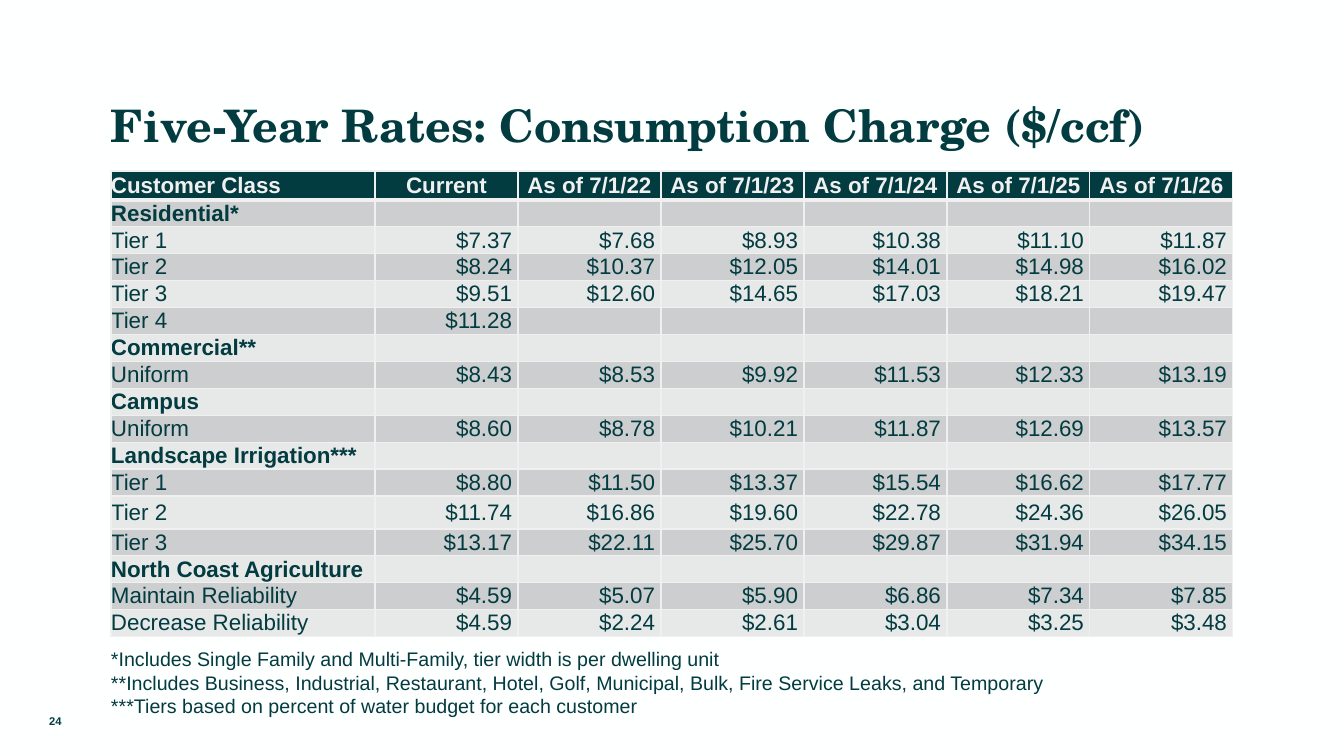
from dataclasses import dataclass

from lxml import etree
from pptx import Presentation
from pptx import util as u
from pptx.dml import color
from pptx.enum import text
from pptx.oxml import ns

PX = 914400 / 100.8


@dataclass(frozen=True)
class Theme:
    background: str = "FEFFFF"
    ink: str = "023B40"
    pale: str = "F0F0F0"
    bands: tuple = ("E7E8E8", "CCCECF")
    heading_font: str = "TeX Gyre Schola"
    body_font: str = "Arial"
    title_size: int = 32
    table_size: int = 16
    footnote_size: int = 14
    number_size: int = 8


THEME = Theme()
ALIGN = text.PP_ALIGN
ANCHOR = text.MSO_ANCHOR

TITLE = "Five-Year Rates: Consumption Charge ($/ccf)"
HEADER = ["Customer Class", "Current"] + [f"As of 7/1/{year}" for year in range(22, 27)]
RATES = [
    ("Residential*",),
    ("Tier 1", 7.37, 7.68, 8.93, 10.38, 11.10, 11.87),
    ("Tier 2", 8.24, 10.37, 12.05, 14.01, 14.98, 16.02),
    ("Tier 3", 9.51, 12.60, 14.65, 17.03, 18.21, 19.47),
    ("Tier 4", 11.28),
    ("Commercial**",),
    ("Uniform", 8.43, 8.53, 9.92, 11.53, 12.33, 13.19),
    ("Campus",),
    ("Uniform", 8.60, 8.78, 10.21, 11.87, 12.69, 13.57),
    ("Landscape Irrigation***",),
    ("Tier 1", 8.80, 11.50, 13.37, 15.54, 16.62, 17.77),
    ("Tier 2", 11.74, 16.86, 19.60, 22.78, 24.36, 26.05),
    ("Tier 3", 13.17, 22.11, 25.70, 29.87, 31.94, 34.15),
    ("North Coast Agriculture",),
    ("Maintain Reliability", 4.59, 5.07, 5.90, 6.86, 7.34, 7.85),
    ("Decrease Reliability", 4.59, 2.24, 2.61, 3.04, 3.25, 3.48),
]
TALL_ROW = 12
FOOTNOTES = [
    "*Includes Single Family and Multi-Family, tier width is per dwelling unit",
    "**Includes Business, Industrial, Restaurant, Hotel, Golf, Municipal, Bulk, "
    "Fire Service Leaks, and Temporary",
    "***Tiers based on percent of water budget for each customer",
]


def px(length):
    return u.Emu(round(length * PX))


def rgb(value):
    return color.RGBColor.from_string(value)


def format_text(frame, size, ink=THEME.ink, bold=False, font=THEME.body_font, align=ALIGN.LEFT):
    for paragraph in frame.paragraphs:
        paragraph.alignment = align
        for run in paragraph.runs:
            run.font.name = font
            run.font.size = u.Pt(size)
            run.font.bold = bold
            run.font.color.rgb = rgb(ink)


def add_text(slide, box, words, insets, anchor, **style):
    frame = slide.shapes.add_textbox(*map(px, box)).text_frame
    frame.word_wrap = True
    frame.vertical_anchor = anchor
    frame.margin_left, frame.margin_top, frame.margin_right, frame.margin_bottom = map(px, insets)
    frame.text = words
    format_text(frame, **style)


def add_borders(cell, bottom_width):
    properties = cell._tc.get_or_add_tcPr()
    for side, width in (("L", 1), ("R", 1), ("T", 1), ("B", bottom_width)):
        line = etree.SubElement(properties, ns.qn(f"a:ln{side}"), w=str(u.Pt(width)))
        fill = etree.SubElement(line, ns.qn("a:solidFill"))
        etree.SubElement(fill, ns.qn("a:srgbClr"), val=THEME.pale)


def fill_cell(cell, words, band, ink, bold, align, right_inset=0, bottom_width=1):
    cell.margin_left = cell.margin_top = cell.margin_bottom = 0
    cell.margin_right = px(right_inset)
    cell.vertical_anchor = ANCHOR.MIDDLE
    add_borders(cell, bottom_width)
    cell.fill.solid()
    cell.fill.fore_color.rgb = rgb(band)
    if words:
        cell.text_frame.text = words
        format_text(cell.text_frame, THEME.table_size, ink, bold, align=align)
    else:
        paragraph = cell.text_frame.paragraphs[0]._p
        etree.SubElement(paragraph, ns.qn("a:endParaRPr"), sz=str(THEME.table_size * 100))


def add_rate_table(slide):
    row_heights = [29] + [25] * len(RATES)
    row_heights[TALL_ROW] = 33
    column_widths = [264] + [143] * (len(HEADER) - 1)
    table = slide.shapes.add_table(
        len(row_heights), len(column_widths),
        px(111), px(171), px(sum(column_widths)), px(sum(row_heights)),
    ).table
    for row, height in zip(table.rows, row_heights):
        row.height = px(height)
    for column, width in zip(table.columns, column_widths):
        column.width = px(width)

    for index, label in enumerate(HEADER):
        align = ALIGN.CENTER if index else ALIGN.LEFT
        fill_cell(table.cell(0, index), label, THEME.ink, THEME.pale, True, align, bottom_width=3)

    for row_index, (customer_class, *charges) in enumerate(RATES, start=1):
        band = THEME.bands[row_index % 2]
        fill_cell(table.cell(row_index, 0), customer_class, band, THEME.ink, not charges, ALIGN.LEFT)
        for index in range(1, len(HEADER)):
            charge = f"${charges[index - 1]:.2f}" if index <= len(charges) else ""
            fill_cell(table.cell(row_index, index), charge, band, THEME.ink, False, ALIGN.RIGHT, 6)


def main():
    deck = Presentation()
    deck.slide_width, deck.slide_height = px(1344), px(756)
    slide = deck.slides.add_slide(deck.slide_layouts[6])
    slide.background.fill.solid()
    slide.background.fill.fore_color.rgb = rgb(THEME.background)

    add_text(slide, (111, 65, 1122, 87), TITLE, (0, 21, 0, 0), ANCHOR.BOTTOM,
             size=THEME.title_size, bold=True, font=THEME.heading_font)
    add_rate_table(slide)
    add_text(slide, (0, 701, 111, 40), "24", (10, 5, 10, 5), ANCHOR.MIDDLE,
             size=THEME.number_size, bold=True, align=ALIGN.CENTER)
    add_text(slide, (111, 643, 1024, 80), "\n".join(FOOTNOTES), (0, 4, 24, 4), ANCHOR.TOP,
             size=THEME.footnote_size, align=ALIGN.JUSTIFY)
    deck.save("out.pptx")


if __name__ == "__main__":
    main()
